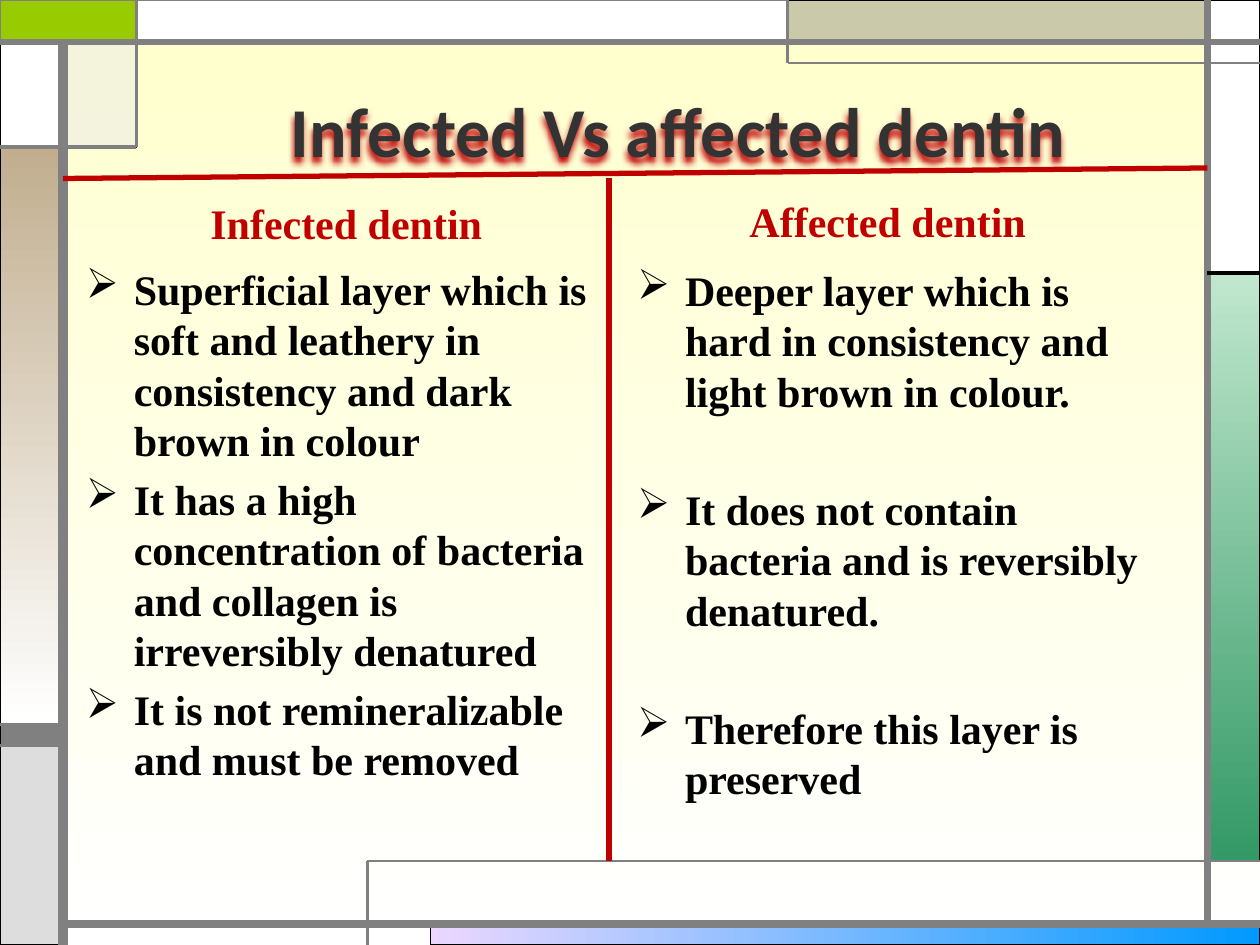
from dataclasses import dataclass

from lxml import etree
from pptx import Presentation
from pptx import util as u
from pptx.dml.color import RGBColor
from pptx.enum import shapes, text
from pptx.oxml import ns

COLUMNS, ROWS = 120, 90
CELL = u.Inches(10) // COLUMNS


@dataclass(frozen=True)
class Theme:
    serif: str = "Times New Roman"
    sans: str = "Calibri"
    title_size: float = 40
    body_size: float = 24
    bullet_gap: float = 4.8
    wide_gap: float = 38.7
    indent: float = 0.38
    ink: str = "000000"
    title: str = "333333"
    accent: str = "C00000"
    frame: str = "808080"
    white: str = "FFFFFF"
    cream: str = "FFFFCC"
    olive: str = "CAC9AA"
    lime: str = "99CC00"
    silver: str = "DDDDDD"
    mist: str = "EAEAEA"
    tan: str = "C1AE8F"
    mint: str = "C1E7CE"
    green: str = "339966"
    lilac: str = "EBD7FF"
    blue: str = "0099FF"


THEME = Theme()
DOWN, ACROSS = 270, 0


def cells(*counts):
    return [u.Emu(round(count * CELL)) for count in counts]


def colour(code):
    return RGBColor.from_string(code)


def add_node(parent, tag, **attributes):
    return etree.SubElement(parent, ns.qn(tag), attributes)


def fill_gradient(fill, start, end, angle):
    fill.gradient()
    fill.gradient_angle = angle
    for stop, code in zip(fill.gradient_stops, (start, end)):
        stop.color.rgb = colour(code)


def add_panel(page, area, paint, edge=THEME.ink, weight=0.75):
    """Paint is one colour, or a tuple of start colour, end colour and angle."""
    panel = page.shapes.add_shape(shapes.MSO_SHAPE.RECTANGLE, *cells(*area))
    panel.shadow.inherit = False
    if isinstance(paint, tuple):
        fill_gradient(panel.fill, *paint)
    else:
        panel.fill.solid()
        panel.fill.fore_color.rgb = colour(paint)
    panel.line.color.rgb = colour(edge)
    panel.line.width = u.Pt(weight)
    return panel


def add_rule(page, ends, weight, code=THEME.frame):
    rule = page.shapes.add_connector(shapes.MSO_CONNECTOR.STRAIGHT, *cells(*ends))
    rule.line.color.rgb = colour(code)
    rule.line.width = u.Pt(weight)
    add_node(rule._element.spPr, "a:effectLst")


def add_box(page, area, wrap=True):
    box = page.shapes.add_textbox(*cells(*area))
    box.text_frame.word_wrap = wrap
    return box


def add_span(para, words, code, size=THEME.body_size, font=THEME.serif):
    span = para.add_run()
    span.text = words
    span.font.name = font
    span.font.size = u.Pt(size)
    span.font.bold = True
    span.font.color.rgb = colour(code)


def add_bullet(para):
    properties = para._p.get_or_add_pPr()
    indent = u.Inches(THEME.indent)
    properties.set("marL", str(indent))
    properties.set("indent", str(-indent))
    add_node(add_node(properties, "a:buClr"), "a:srgbClr", val=THEME.ink)
    add_node(properties, "a:buChar", char="➢")


def add_panels(page):
    t = THEME
    for area, paint in (
        ((41, 88, 79, 2), (t.lilac, t.blue, ACROSS)),
        ((115, 26, 5, 56), (t.mint, t.green, DOWN)),
        ((0, 69, 6, 2), t.frame),
        ((0, 71, 6, 19), t.silver),
        ((115, 0, 5, 26), t.white),
        ((75, 0, 40, 4), t.olive),
    ):
        add_panel(page, area, paint)

    veil = add_panel(page, (6, 4, 7, 10), t.mist)
    tint = veil._element.spPr.find(ns.qn("a:solidFill"))[0]
    add_node(tint, "a:alpha", val="50000")

    add_panel(page, (0, 14, 6, 55), (t.tan, t.white, DOWN))
    add_panel(page, (0, 4, 6, 10), t.white)
    add_panel(page, (0, 0, 13, 4), t.lime, t.frame, 1.5)
    add_panel(page, (13, 0, 62, 4), t.white, t.frame)


def add_frame_rules(page):
    for ends, weight in (
        ((6, 90, 6, 4), 6),
        ((6, 88, 120, 88), 4.5),
        ((115, 88, 115, 0), 4.5),
        ((0, 4, 120, 4), 3),
        ((120, 6, 75, 6), 1.5),
        ((75, 6, 75, 0), 1.5),
    ):
        add_rule(page, ends, weight)
    add_rule(page, (115, 26, 120, 26), 2.25, THEME.ink)
    for ends, weight in (
        ((13, 0, 13, 14), 1.5),
        ((13, 14, 0, 14), 2.25),
        ((35, 90, 35, 82), 1.5),
        ((35, 82, 120, 82), 1.5),
        ((6, 69, 0, 69), 2.25),
        ((6, 71, 0, 71), 2.25),
    ):
        add_rule(page, ends, weight)


def add_title(page, area, words):
    box = add_box(page, area)
    box.text_frame.vertical_anchor = text.MSO_ANCHOR.MIDDLE
    para = box.text_frame.paragraphs[0]
    para.alignment = text.PP_ALIGN.CENTER
    add_span(para, words, THEME.title, THEME.title_size, THEME.sans)
    effects = add_node(box._element.spPr, "a:effectLst")
    shadow = add_node(effects, "a:outerShdw", blurRad=str(u.Pt(4)),
                      dist=str(u.Pt(3)), dir="7200000", algn="tl", rotWithShape="0")
    add_node(shadow, "a:srgbClr", val=THEME.accent)


def add_heading(page, area, words):
    box = add_box(page, area, wrap=False)
    add_span(box.text_frame.paragraphs[0], words, THEME.accent)


def add_points(page, area, points, gap):
    frame = add_box(page, area).text_frame
    for index, words in enumerate(points):
        para = frame.add_paragraph() if index else frame.paragraphs[0]
        para.space_before = u.Pt(gap if index else THEME.bullet_gap)
        add_bullet(para)
        add_span(para, words, THEME.ink)


def main():
    deck = Presentation()
    deck.slide_width, deck.slide_height = cells(COLUMNS, ROWS)
    page = deck.slides.add_slide(deck.slide_layouts[6])
    fill_gradient(page.background.fill, THEME.cream, THEME.white, DOWN)

    add_panels(page)
    add_frame_rules(page)
    add_points(page, (7, 24.5, 51, 59.4), (
        "Superficial layer which is soft and leathery in consistency and dark brown in colour",
        "It has a high concentration of bacteria and collagen is irreversibly denatured",
        "It is not remineralizable and must be removed",
    ), THEME.bullet_gap)
    add_title(page, (14.25, 3.75, 100.7, 17.25), "Infected Vs affected dentin")
    add_rule(page, (6, 17, 115, 16), 3, THEME.accent)
    add_rule(page, (58, 17, 58, 82), 3, THEME.accent)
    add_points(page, (59.5, 24.6, 50.5, 53.5), (
        "Deeper layer which is hard in consistency and light brown in colour.",
        "It does not contain bacteria and is reversibly denatured.",
        "Therefore this layer is preserved",
    ), THEME.wide_gap)
    add_heading(page, (18.85, 18.25, 28.55, 6), "Infected dentin")
    add_heading(page, (70.2, 18, 29, 6), "Affected dentin")

    deck.save("out.pptx")


if __name__ == "__main__":
    main()
